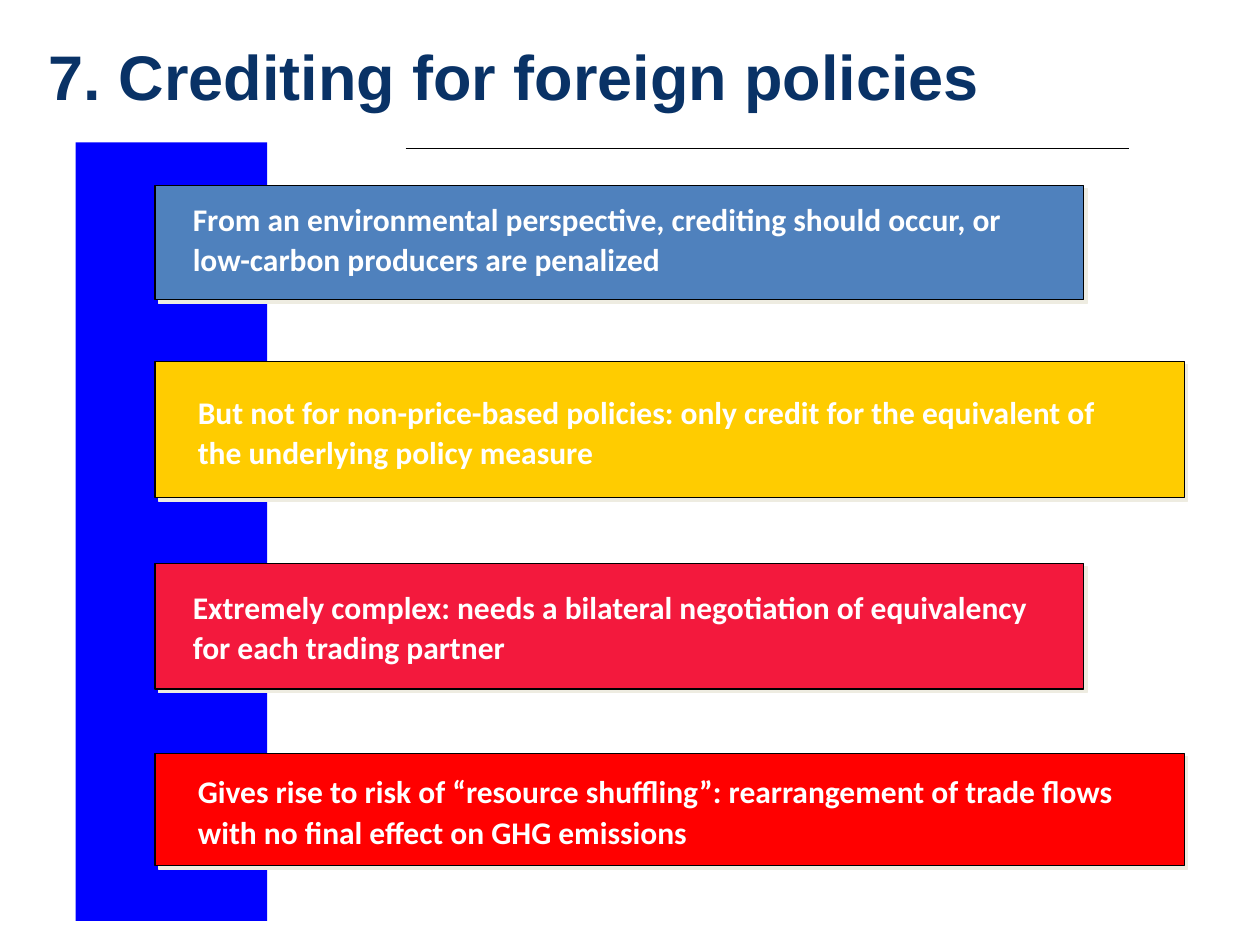
from lxml.etree import SubElement
from pptx import Presentation
from pptx.dml.color import RGBColor
from pptx.enum.shapes import MSO_CONNECTOR, MSO_SHAPE
from pptx.enum.text import MSO_ANCHOR
from pptx.oxml.ns import qn
from pptx.util import Inches, Pt

# Content
TITLE = "7. Crediting for foreign policies"
HEX = {"navy": "093266", "band": "0000FF", "steel": "4F81BD", "gold": "FFCC00",
       "rose": "F3193D", "red": "FF0000", "white": "FFFFFF", "black": "000000",
       "shade": "EEECE1"}
# Bar size: bar width, text left, text width
SIZES = {"short": (7.37, 1.53, 6.75), "long": (8.17, 1.57, 7.49)}
# Text, fill, size, bar top and height, text top and height
BARS = [
    ("From an environmental perspective, crediting should occur, or "
     "low-carbon producers are penalized", "steel", "short", 1.47, 0.91, 1.47, 0.83),
    ("But not for non-price-based policies: only credit for the equivalent of "
     "the underlying policy measure", "gold", "long", 2.87, 1.08, 2.92, 0.99),
    ("Extremely complex: needs a bilateral negotiation of equivalency "
     "for each trading partner", "rose", "short", 4.47, 1, 4.51, 0.91),
    ("Gives rise to risk of “resource shuffling”: rearrangement of trade flows "
     "with no final effect on GHG emissions", "red", "long", 5.98, 0.89, 6.02, 0.82),
]
BAR_LEFT = 1.23


def color(name):
    return RGBColor.from_string(HEX[name])


def add_text(shapes, text, box, size, font, ink, inset=None, spacing=None, after=None):
    frame = shapes.add_textbox(*map(Inches, box)).text_frame
    frame.word_wrap = True
    frame.vertical_anchor = MSO_ANCHOR.MIDDLE
    if inset is not None:
        frame.margin_left = frame.margin_right = Inches(inset)
        frame.margin_top = frame.margin_bottom = Inches(inset)
    para = frame.paragraphs[0]
    if spacing:
        para.line_spacing = spacing
    if after:
        para.space_after = Pt(after)
    run = para.add_run()
    run.text = text
    run.font.size, run.font.name, run.font.bold = Pt(size), font, True
    run.font.color.rgb = color(ink)


def add_rect(shapes, box, fill, line=None):
    rect = shapes.add_shape(MSO_SHAPE.RECTANGLE, *map(Inches, box))
    rect.shadow.inherit = False
    rect.fill.solid()
    rect.fill.fore_color.rgb = color(fill)
    if line:
        rect.line.color.rgb = color(line)
        rect.line.width = Pt(0.75)
    else:
        rect.line.fill.background()
    return rect


def add_shadow(rect):
    effects = rect._element.spPr.find(qn("a:effectLst"))
    outer = SubElement(effects, qn("a:outerShdw"), dist=str(Pt(2.8)),
                       dir=str(45 * 60000), algn="ctr", rotWithShape="0")
    SubElement(outer, qn("a:srgbClr"), val=HEX["shade"])


deck = Presentation()
deck.slide_width, deck.slide_height = Inches(10), Inches(7.5)
slide = deck.slides.add_slide(deck.slide_layouts[6])
shapes = slide.shapes

# Title, side band and rule
add_text(shapes, TITLE, (0.29, 0.44, 9.43, 0.32), 36, "Arial", "navy")
add_rect(shapes, (0.6, 1.13, 1.52, 6.18), "band")
rule = shapes.add_connector(MSO_CONNECTOR.STRAIGHT,
                            *map(Inches, (3.22, 1.18, 8.96, 1.18)))
rule.line.color.rgb = color("black")
rule.line.width = Pt(0.75)
SubElement(rule._element.spPr, qn("a:effectLst"))

# Bars, each grouped with its text
for text, fill, size, top, height, text_top, text_height in BARS:
    width, text_left, text_width = SIZES[size]
    group = shapes.add_group_shape().shapes
    bar = add_rect(group, (BAR_LEFT, top, width, height), fill, line="black")
    add_shadow(bar)
    add_text(group, text, (text_left, text_top, text_width, text_height),
             18, "Calibri", "white", inset=0, spacing=1.07, after=8)

deck.save("out.pptx")
